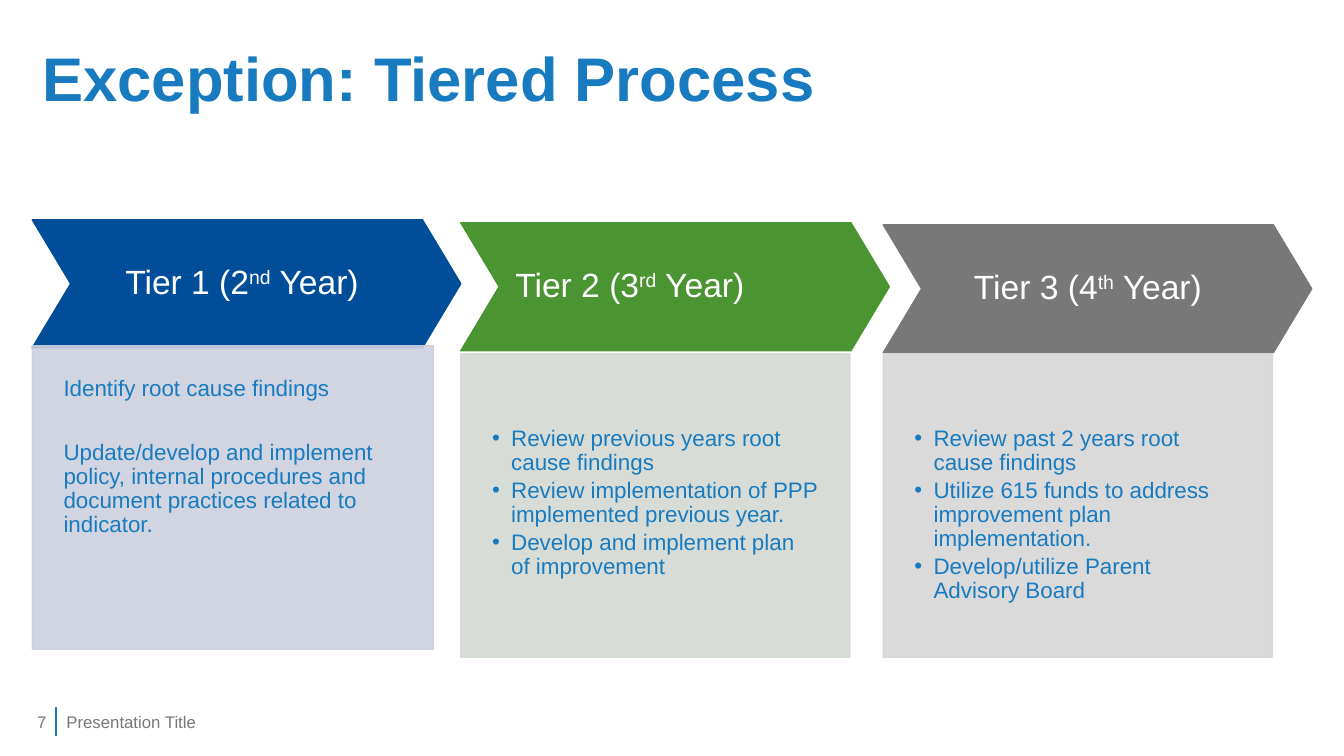
"""Build the tiered process slide with three chevron headings and their panels."""
from dataclasses import dataclass

from lxml.etree import SubElement
from pptx import Presentation
from pptx.dml.color import RGBColor
from pptx.enum.shapes import MSO_CONNECTOR, MSO_SHAPE
from pptx.enum.text import MSO_ANCHOR, MSO_AUTO_SIZE, PP_ALIGN
from pptx.oxml.ns import qn
from pptx.util import Inches, Pt

FONT = "Arial"
BLUE = RGBColor(0x18, 0x7B, 0xC0)
NAVY = RGBColor(0x00, 0x4E, 0x9A)
GREEN = RGBColor(0x4A, 0x94, 0x31)
GRAY = RGBColor(0x78, 0x78, 0x78)
PALE_BLUE = RGBColor(0xCC, 0xD0, 0xDE)
PALE_GREEN = RGBColor(0xD3, 0xDA, 0xD2)
PALE_GRAY = RGBColor(0xD7, 0xD7, 0xD7)
WHITE = RGBColor(0xFF, 0xFF, 0xFF)
COMPARISON_LAYOUT = 5 - 1
UNUSED_PLACEHOLDER = 3


@dataclass
class Tier:
    """One column of the process."""

    heading: tuple[str, str, str]
    items: list[str]
    color: RGBColor
    panel_color: RGBColor
    placeholder: int
    left: float
    top: float
    panel_top: float
    panel_width: float = 3.86
    text_top: float = 0.73
    text_right: float = 0.16
    space_after: float = 2.5
    align: PP_ALIGN = PP_ALIGN.CENTER
    bulleted: bool = True


TIERS = [
    Tier(("Tier 1 (2", "nd", " Year)"),
         ["Identify root cause findings",
          "Update/develop and implement policy, internal procedures and "
          "document practices related to indicator."],
         NAVY, PALE_BLUE, 1, 0.32, 2.18, 3.43, panel_width=3.98, text_top=0.31,
         text_right=0.25, space_after=28.5, bulleted=False),
    Tier(("Tier 2 (3", "rd", " Year)"),
         ["Review previous years root cause findings",
          "Review implementation of PPP implemented previous year.",
          "Develop and implement plan of improvement"],
         GREEN, PALE_GREEN, 2, 4.57, 2.21, 3.51, align=PP_ALIGN.LEFT),
    Tier(("Tier 3 (4", "th", " Year)"),
         ["Review past 2 years root cause findings",
          "Utilize 615 funds to address improvement plan implementation.",
          "Develop/utilize Parent Advisory Board"],
         GRAY, PALE_GRAY, 4, 8.76, 2.23, 3.51, text_right=0.35),
]


def place(shape, left: float, top: float, width: float, height: float) -> None:
    """Move and size a shape, in inches."""
    shape.left, shape.top = Inches(left), Inches(top)
    shape.width, shape.height = Inches(width), Inches(height)


def set_frame(frame, anchor: MSO_ANCHOR, left: float = 0.1, top: float = 0.05,
              right: float = 0.1, bottom: float = 0.05) -> None:
    """Set wrapping, anchor and insets of a text frame."""
    frame.word_wrap = True
    frame.auto_size = MSO_AUTO_SIZE.NONE
    frame.vertical_anchor = anchor
    frame.margin_left, frame.margin_top = Inches(left), Inches(top)
    frame.margin_right, frame.margin_bottom = Inches(right), Inches(bottom)


def add_span(para, text: str, size: float, color: RGBColor, bold: bool = False):
    """Add one formatted run."""
    span = para.add_run()
    span.text = text
    span.font.name, span.font.size = FONT, Pt(size)
    span.font.bold = bold
    span.font.color.rgb = color
    return span


def paint(shape, color: RGBColor, opacity: int = 100) -> None:
    """Give a shape one colour for fill and outline."""
    shape.fill.solid()
    shape.fill.fore_color.rgb = color
    shape.line.color.rgb = color
    shape.line.width = Pt(1)
    if opacity < 100:
        for node in shape._element.spPr.iter(qn("a:srgbClr")):
            SubElement(node, qn("a:alpha")).set("val", str(opacity * 1000))


def set_bullet(para, bulleted: bool) -> None:
    """Turn the bullet and hanging indent of a paragraph on or off."""
    properties = para._p.get_or_add_pPr()
    indent = Inches(0.19) if bulleted else 0
    properties.set("marL", str(indent))
    properties.set("indent", str(-indent))
    if bulleted:
        SubElement(properties, qn("a:buChar")).set("char", "•")
    else:
        SubElement(properties, qn("a:buNone"))


def add_panel(page, tier: Tier):
    """Fill the body placeholder below a chevron."""
    panel = page.placeholders[tier.placeholder]
    place(panel, tier.left, tier.panel_top, tier.panel_width, 3.01)
    paint(panel, tier.panel_color, 90)
    frame = panel.text_frame
    set_frame(frame, MSO_ANCHOR.TOP, 0.31, tier.text_top, 0.31, 0.61)
    for index, item in enumerate(tier.items):
        para = frame.add_paragraph() if index else frame.paragraphs[0]
        set_bullet(para, tier.bulleted)
        para.alignment = PP_ALIGN.LEFT
        para.line_spacing = 0.9
        para.space_before, para.space_after = Pt(0), Pt(tier.space_after)
        add_span(para, item, 16, BLUE)
    return panel


def add_chevron(page, tier: Tier):
    """Draw a chevron with its heading."""
    chevron = page.shapes.add_shape(
        MSO_SHAPE.CHEVRON, Inches(tier.left), Inches(tier.top), Inches(4.25), Inches(1.27))
    chevron.adjustments[0] = 0.3
    chevron.shadow.inherit = False
    paint(chevron, tier.color)
    set_frame(chevron.text_frame, MSO_ANCHOR.MIDDLE, 0.16, 0.16, tier.text_right, 0.16)
    para = chevron.text_frame.paragraphs[0]
    para.alignment = tier.align
    para.line_spacing = 0.9
    start, ordinal, end = tier.heading
    add_span(para, start, 24, WHITE)
    add_span(para, ordinal, 24, WHITE).font._element.set("baseline", "30000")
    add_span(para, end, 24, WHITE)
    return chevron


def add_title(page, text: str) -> None:
    """Format and fill the title placeholder."""
    title = page.shapes.title
    place(title, 0.32, 0.4, 12.69, 1.45)
    set_frame(title.text_frame, MSO_ANCHOR.TOP, top=0.08)
    para = title.text_frame.paragraphs[0]
    para.alignment = PP_ALIGN.LEFT
    para.line_spacing = 0.9
    add_span(para, text, 44, BLUE, bold=True)


def add_footer(page) -> None:
    """Draw the page number, the divider and the footer text."""
    divider = page.shapes.add_connector(
        MSO_CONNECTOR.STRAIGHT, Inches(0.56), Inches(7.01), Inches(0.56), Inches(7.3))
    divider.line.color.rgb = BLUE
    divider.line.width = Pt(1.5)
    SubElement(divider._element.spPr, qn("a:effectLst"))
    for text, left, width, align in (("Presentation Title", 0.56, 6.52, PP_ALIGN.LEFT),
                                     ("7", 0, 0.56, PP_ALIGN.RIGHT)):
        box = page.shapes.add_textbox(Inches(left), Inches(6.96), Inches(width), Inches(0.4))
        set_frame(box.text_frame, MSO_ANCHOR.MIDDLE)
        para = box.text_frame.paragraphs[0]
        para.alignment = align
        add_span(para, text, 12, GRAY)


def main() -> None:
    """Build and save the deck."""
    deck = Presentation()
    deck.slide_width, deck.slide_height = Inches(13.33), Inches(7.5)
    page = deck.slides.add_slide(deck.slide_layouts[COMPARISON_LAYOUT])
    unused = page.placeholders[UNUSED_PLACEHOLDER]._element
    unused.getparent().remove(unused)
    add_title(page, "Exception: Tiered Process")
    for tier in TIERS:
        panel = add_panel(page, tier)
        chevron = add_chevron(page, tier)
        panel._element.addprevious(chevron._element)
    add_footer(page)
    deck.save("out.pptx")


if __name__ == "__main__":
    main()
